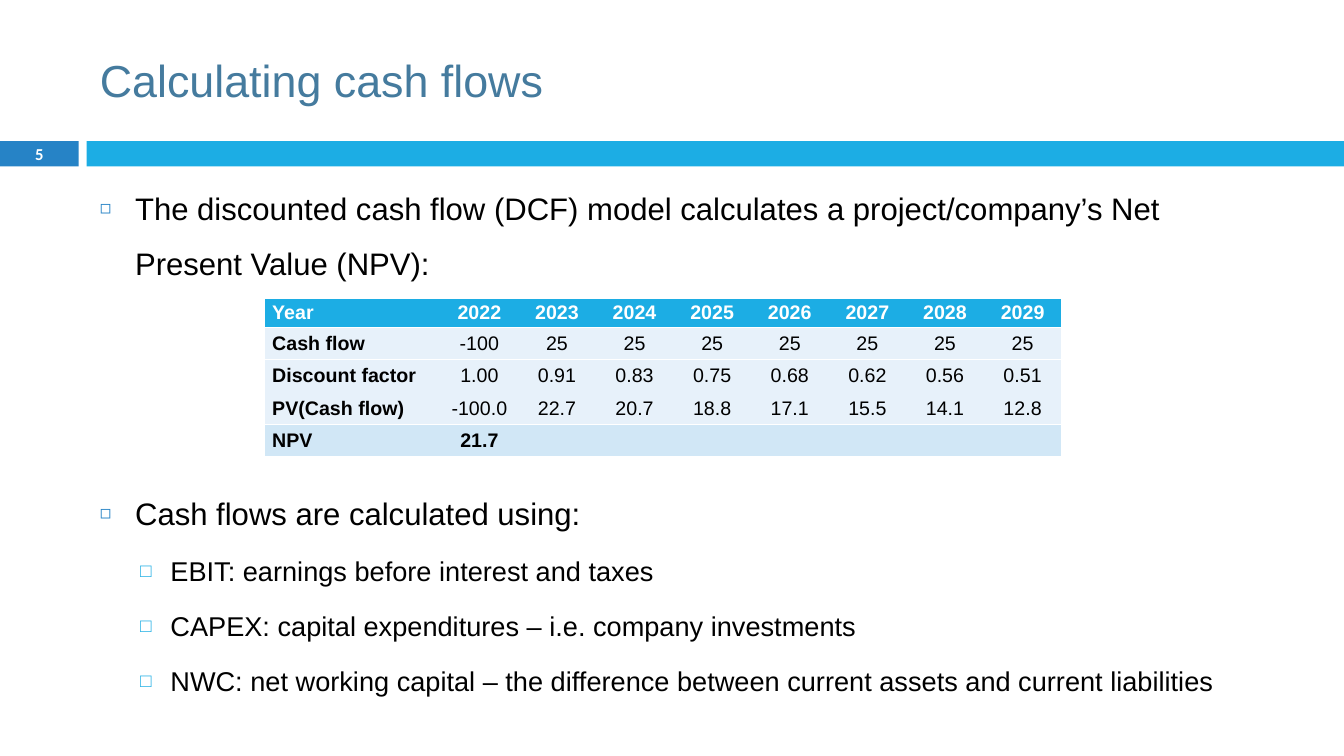
from lxml import etree
from pptx import Presentation
from pptx import util as u
from pptx.dml.color import RGBColor
from pptx.enum import shapes, text
from pptx.oxml.ns import qn

PX = 9144
COLORS = {
    "title": "457B9E", "sky": "1CADE4", "blue": "2683C6", "black": "000000",
    "white": "FFFFFF", "pale": "E7F1FA", "total": "D1E7F6",
}


def rgb(name):
    return RGBColor.from_string(COLORS[name])


def write(p, content, size, color="black", font="Arial", bold=False,
          align=text.PP_ALIGN.LEFT, line=None, before=0, after=0):
    p.alignment = align
    p.line_spacing = line
    p.space_before = u.Pt(before)
    p.space_after = u.Pt(after)
    r = p.add_run()
    r.text = content
    r.font.size = u.Pt(size)
    r.font.name = font
    r.font.bold = bold
    r.font.color.rgb = rgb(color)


prs = Presentation()
prs.slide_width, prs.slide_height = 1333 * PX, 750 * PX
s = prs.slides.add_slide(prs.slide_layouts[1])

for left, width, color in [(0, 78, "blue"), (86, 1247, "sky")]:
    sp = s.shapes.add_shape(shapes.MSO_SHAPE.RECTANGLE, left * PX, 140 * PX, width * PX, 25 * PX)
    sp.shadow.inherit = False
    sp.fill.solid()
    sp.fill.fore_color.rgb = rgb(color)
    sp.line.fill.background()
    if color == "blue":
        tf = sp.text_frame
        tf.margin_top = tf.margin_bottom = 0
        tf.vertical_anchor = text.MSO_ANCHOR.MIDDLE
        write(tf.paragraphs[0], "5", 11.9, color="white", font="Calibri", bold=True,
              align=text.PP_ALIGN.CENTER)

title, body = s.placeholders
for sp, top, width, height, anchor in [
    (title, 25, 1189, 108, text.MSO_ANCHOR.MIDDLE),
    (body, 166, 1136, 539, text.MSO_ANCHOR.TOP),
]:
    sp.left, sp.top, sp.width, sp.height = 89 * PX, top * PX, width * PX, height * PX
    sp.text_frame.word_wrap = True
    sp.text_frame.auto_size = text.MSO_AUTO_SIZE.NONE
    sp.text_frame.vertical_anchor = anchor

write(title.text_frame.paragraphs[0], "Calculating cash flows", 32, color="title")

LEVELS = [
    {"size": 22.2, "left": 35, "hang": 35, "char": "◻", "color": "blue", "scale": 60},
    {"size": 19.4, "left": 70, "hang": 30, "char": "□", "color": "sky", "scale": 70},
]
bullets = [
    (0, 7, "The discounted cash flow (DCF) model calculates a project/company’s Net Present Value (NPV):"),
    (0, 140, "Cash flows are calculated using:"),
    (1, 5.5, "EBIT: earnings before interest and taxes"),
    (1, 5.5, "CAPEX: capital expenditures – i.e. company investments"),
    (1, 5.5, "NWC: net working capital – the difference between current assets and current liabilities"),
]
tf = body.text_frame
for i, (level, before, content) in enumerate(bullets):
    p = tf.add_paragraph() if i else tf.paragraphs[0]
    style = LEVELS[level]
    p.level = level
    write(p, content, style["size"], line=1.46, before=before)
    pPr = p._p.get_or_add_pPr()
    pPr.set("marL", str(style["left"] * PX))
    pPr.set("indent", str(-style["hang"] * PX))
    clr = etree.SubElement(pPr, qn("a:buClr"))
    etree.SubElement(clr, qn("a:srgbClr"), val=COLORS[style["color"]])
    etree.SubElement(pPr, qn("a:buSzPct"), val=str(style["scale"] * 1000))
    etree.SubElement(pPr, qn("a:buChar"), char=style["char"])

rows = [
    ["Year", *(str(year) for year in range(2022, 2030))],
    ["Cash flow", "-100", *["25"] * 7],
    ["Discount factor", "1.00", "0.91", "0.83", "0.75", "0.68", "0.62", "0.56", "0.51"],
    ["PV(Cash flow)", "-100.0", "22.7", "20.7", "18.8", "17.1", "15.5", "14.1", "12.8"],
    ["NPV", "21.7", *[""] * 7],
]
fills = ["sky", "pale", "pale", "pale", "total"]
rules = [("T", "B"), ("T",), (), ("B",), ("T", "B")]
table = s.shapes.add_table(5, 9, 263 * PX, 296 * PX, 790 * PX, 157 * PX).table
table._tbl.tblPr.find(qn("a:tableStyleId")).text = "{2D5ABB26-0587-4C30-8999-92F81FD0307C}"
for c, col in enumerate(table.columns):
    col.width = (77 if c else 174) * PX
for r, row in enumerate(rows):
    table.rows[r].height = (32 if r else 29) * PX
    for c, content in enumerate(row):
        cell = table.cell(r, c)
        cell.margin_left = cell.margin_right = 7 * PX
        cell.margin_top = cell.margin_bottom = 0
        cell.vertical_anchor = text.MSO_ANCHOR.MIDDLE
        for side in rules[r]:
            ln = etree.SubElement(cell._tc.get_or_add_tcPr(), qn(f"a:ln{side}"), w="12700")
            fill = etree.SubElement(ln, qn("a:solidFill"))
            etree.SubElement(fill, qn("a:srgbClr"), val=COLORS["white"])
        cell.fill.solid()
        cell.fill.fore_color.rgb = rgb(fills[r])
        if content:
            gap = 1 if r else 2
            write(cell.text_frame.paragraphs[0], content, 14,
                  color="black" if r else "white", bold=c == 0 or r in (0, 4),
                  align=text.PP_ALIGN.CENTER if c else text.PP_ALIGN.LEFT,
                  line=u.Pt(16) if r else None, before=gap, after=gap)

prs.save("out.pptx")
